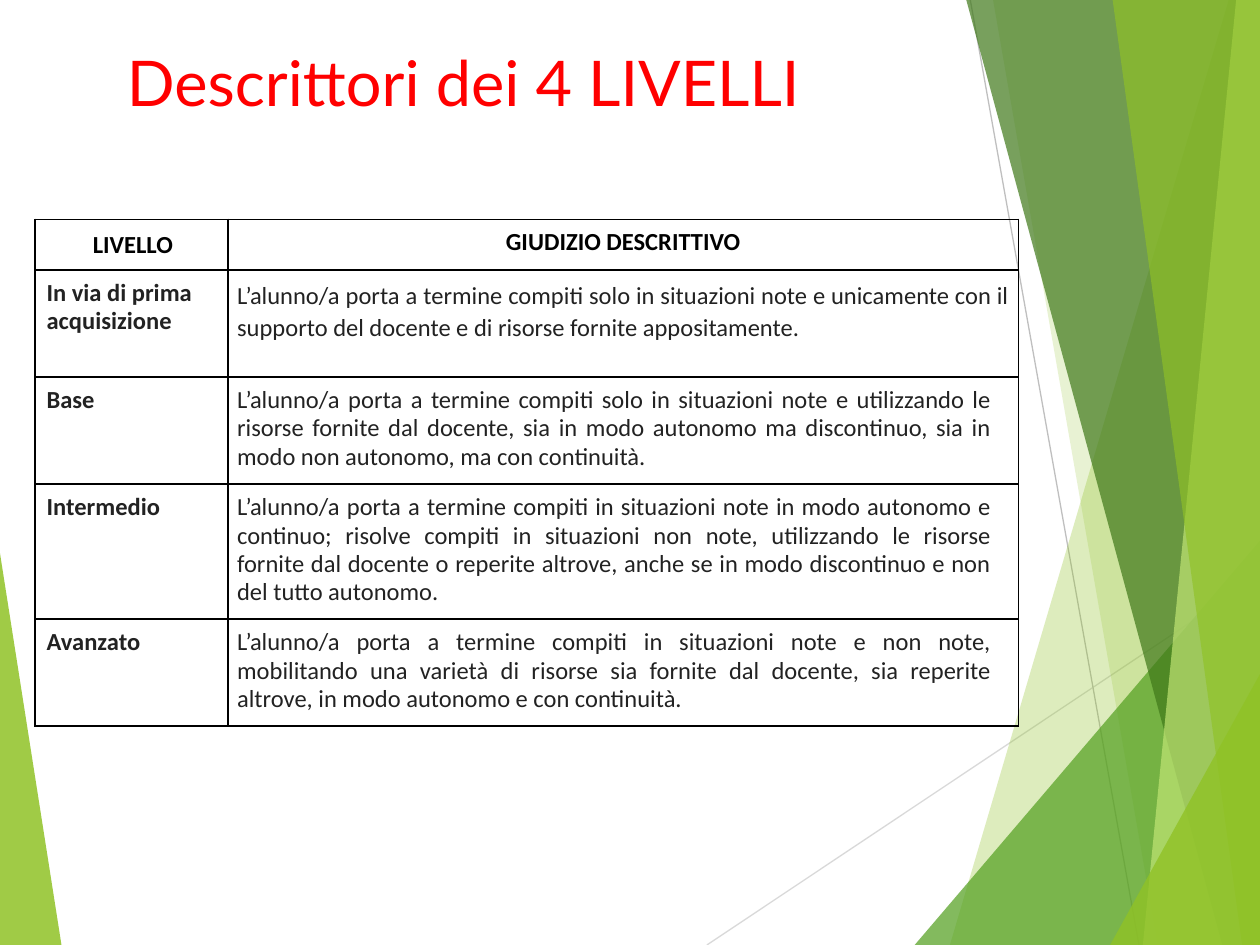
from lxml.etree import SubElement
from pptx import Presentation
from pptx.dml.color import RGBColor
from pptx.enum.text import PP_ALIGN
from pptx.oxml.ns import qn
from pptx.util import Cm, Pt

WIDE, HIGH = 25.4, 19.05
HUES = {
    "lime": "90C226", "leaf": "54A021", "moss": "3F7819", "pale": "C0E474",
    "rule": "D9D9D9", "dim": "BFBFBF", "title": "FF0000",
    "head": "000000", "ink": "222222", "edge": "000000",
}
# Start x, start y, foot x, colour, opacity in percent
BANDS = [
    (24.77, 0, 19.15, "lime", 30),
    (20.02, 0, 23.34, "lime", 20),
    (WIDE, 10.9, 18.44, "leaf", 72),
    (19.48, 0, 24.64, "moss", 70),
    (24.92, 0, 23.04, "pale", 70),
    (22.43, 0, 25.04, "lime", 65),
    (WIDE, 13.59, 22.38, "lime", 80),
]
HEADS = ("LIVELLO", "GIUDIZIO DESCRITTIVO")
LEVELS = [
    ("In via di prima acquisizione",
     "L’alunno/a porta a termine compiti solo in situazioni note e unicamente "
     "con il supporto del docente e di risorse fornite appositamente."),
    ("Base",
     "L’alunno/a porta a termine compiti solo in situazioni note e utilizzando "
     "le risorse fornite dal docente, sia in modo autonomo ma discontinuo, sia "
     "in modo non autonomo, ma con continuità."),
    ("Intermedio",
     "L’alunno/a porta a termine compiti in situazioni note in modo autonomo e "
     "continuo; risolve compiti in situazioni non note, utilizzando le risorse "
     "fornite dal docente o reperite altrove, anche se in modo discontinuo e "
     "non del tutto autonomo."),
    ("Avanzato",
     "L’alunno/a porta a termine compiti in situazioni note e non note, "
     "mobilitando una varietà di risorse sia fornite dal docente, sia reperite "
     "altrove, in modo autonomo e con continuità."),
]
COLS = (3.89, 15.93)
ROWS = (1.02, 2.16, 2.16, 2.72, 2.16)


def paint(hue):
    return RGBColor.from_string(HUES[hue])


def write(frame, text, size=14, font="Calibri", hue="ink", bold=False,
          align=PP_ALIGN.LEFT, left=0, right=0, lead=1.0, after=0):
    frame.word_wrap = True
    para = frame.paragraphs[0]
    para.alignment = align
    para.line_spacing = lead
    para.space_after = Pt(after)
    props = para._p.get_or_add_pPr()
    props.set("marL", str(Cm(left)))
    props.set("marR", str(Cm(right)))
    run = para.add_run()
    run.text = text
    run.font.size = Pt(size)
    run.font.name = font
    run.font.bold = bold
    run.font.color.rgb = paint(hue)


def shard(slide, points, hue, alpha):
    """Draw a see-through polygon without an outline."""
    spots = [(Cm(x), Cm(y)) for x, y in points]
    pen = slide.shapes.build_freeform(*spots[0], scale=1.0)
    pen.add_line_segments(spots[1:], close=True)
    shape = pen.convert_to_shape()
    shape.shadow.inherit = False
    shape.line.fill.background()
    shape.fill.solid()
    shape.fill.fore_color.rgb = paint(hue)
    color = shape.fill._xPr.find(qn("a:solidFill"))[0]
    SubElement(color, qn("a:alpha"), val=str(alpha * 1000))


def thread(slide, x1, y1, x2, y2, hue):
    """Draw a thin straight line."""
    line = slide.shapes.add_connector(1, Cm(x1), Cm(y1), Cm(x2), Cm(y2))
    line.line.color.rgb = paint(hue)
    line.line.width = Pt(0.75)
    SubElement(line._element.spPr, qn("a:effectLst"))


def backdrop(slide, left, top, wide, high):
    end, foot = left + wide, top + high
    shard(slide, [(left, top + 11.15), (left + 1.24, foot), (left, foot)],
          "lime", 85)
    thread(slide, left + 14.25, foot, end, top + 11.61, "rule")
    thread(slide, left + 19.56, top, left + 22.96, foot, "dim")
    for x, y, low, hue, alpha in BANDS:
        points = [(left + x, top + y), (left + low, foot), (end, foot)]
        if x < wide:
            points.append((end, top + y))
        shard(slide, points, hue, alpha)


def heading(slide, left, top, wide, high):
    box = slide.shapes.add_textbox(Cm(left), Cm(top), Cm(wide), Cm(high))
    write(box.text_frame, "Descrittori dei 4 LIVELLI",
          size=36, font="Lato", hue="title")


def border(cell):
    props = cell._tc.get_or_add_tcPr()
    for spot, side in enumerate(("lnL", "lnR", "lnT", "lnB")):
        line = props.makeelement(qn("a:" + side), {"w": str(Pt(1))})
        fill = SubElement(line, qn("a:solidFill"))
        SubElement(fill, qn("a:srgbClr"), val=HUES["edge"])
        props.insert(spot, line)


def fill_cell(cell, text, row, col):
    cell.margin_left = cell.margin_right = Cm(0.18)
    cell.margin_top = cell.margin_bottom = Cm(0.18)
    cell.fill.background()
    border(cell)
    style = {"lead": 0.95, "after": 8, "bold": row == 0 or col == 0}
    if col == 0:
        style["left"] = 0.05
    else:
        style.update(align=PP_ALIGN.JUSTIFY, right=0.36)
    if row == 0:
        style.update(align=PP_ALIGN.CENTER, hue="head")
        if col == 0:
            style["lead"] = 1.07
        else:
            style["left"] = 0.36
    elif (row, col) == (1, 1):
        style.update(lead=1.07, after=18, right=0)
    write(cell.text_frame, text, **style)


def levels(slide, left, top, wide, high):
    grid = slide.shapes.add_table(len(ROWS), len(COLS), Cm(left), Cm(top),
                                  Cm(wide), Cm(high)).table
    grid.first_row = grid.horz_banding = False
    for part, size in zip(grid.columns, COLS):
        part.width = Cm(size)
    for part, size in zip(grid.rows, ROWS):
        part.height = Cm(size)
    for row, texts in enumerate([HEADS] + LEVELS):
        for col, text in enumerate(texts):
            fill_cell(grid.cell(row, col), text, row, col)


def main():
    deck = Presentation()
    deck.slide_width, deck.slide_height = Cm(WIDE), Cm(HIGH)
    slide = deck.slides.add_slide(deck.slide_layouts[6])
    backdrop(slide, 0, 0, WIDE, HIGH)
    heading(slide, 2.31, 0.76, 21.82, 2.77)
    levels(slide, 0.71, 4.42, sum(COLS), sum(ROWS))
    deck.save("out.pptx")


if __name__ == "__main__":
    main()
